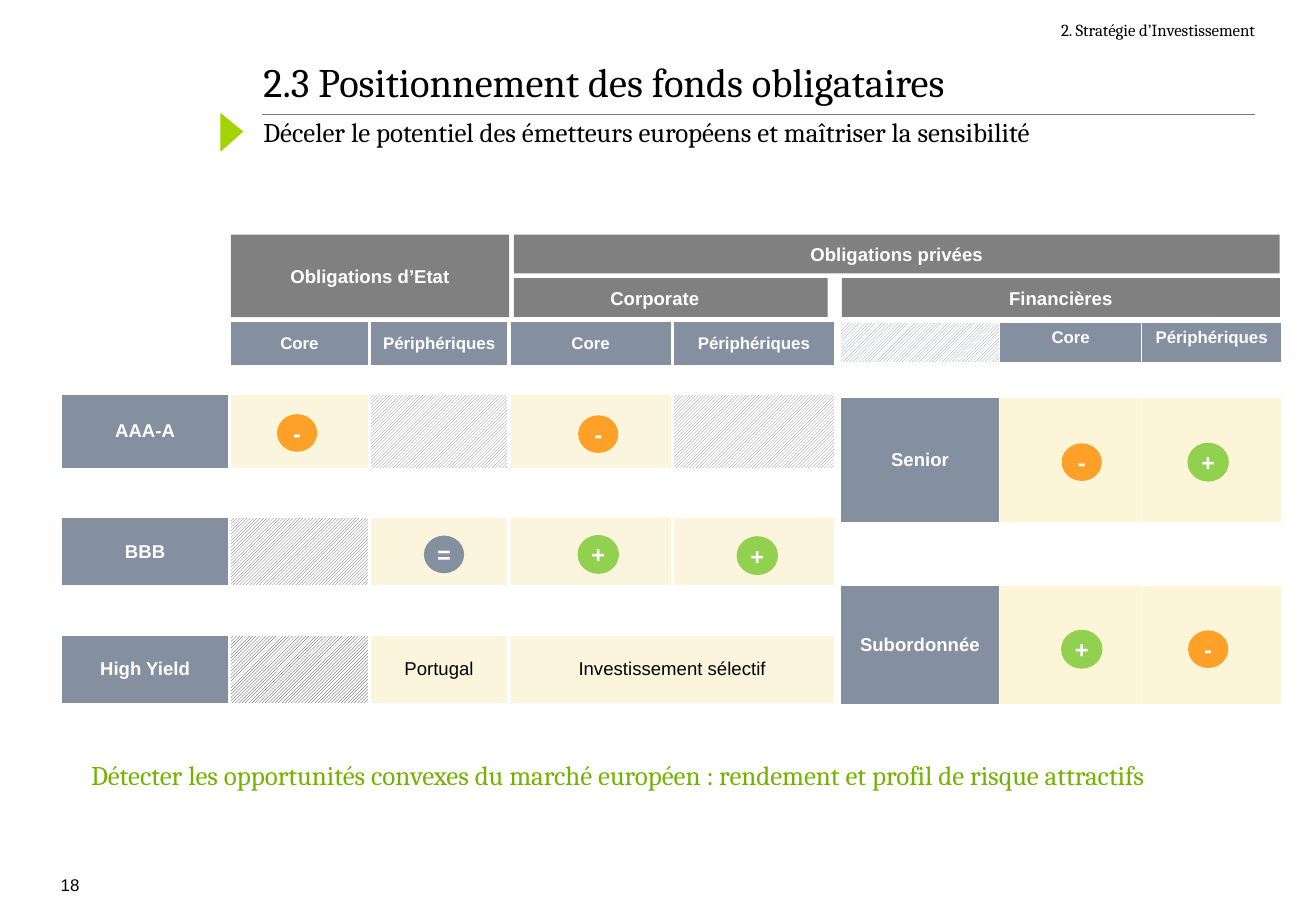
"""Build the slide on the positioning of bond funds."""
from dataclasses import dataclass
from typing import Any, NamedTuple

from lxml import etree
from pptx import Presentation
from pptx.dml.color import RGBColor
from pptx.enum.dml import MSO_PATTERN
from pptx.enum.shapes import MSO_CONNECTOR, MSO_SHAPE
from pptx.enum.text import MSO_ANCHOR, PP_ALIGN
from pptx.oxml.ns import qn
from pptx.util import Pt

LEFT, CENTER, RIGHT = PP_ALIGN.LEFT, PP_ALIGN.CENTER, PP_ALIGN.RIGHT
TOP, MIDDLE, BOTTOM = MSO_ANCHOR.TOP, MSO_ANCHOR.MIDDLE, MSO_ANCHOR.BOTTOM
OVAL, RECT, TRIANGLE = MSO_SHAPE.OVAL, MSO_SHAPE.RECTANGLE, MSO_SHAPE.ISOSCELES_TRIANGLE
HATCH = MSO_PATTERN.LIGHT_UPWARD_DIAGONAL
STRAIGHT = MSO_CONNECTOR.STRAIGHT

WHITE, BLACK, GREY, SLATE = "FFFFFF", "000000", "808080", "848FA0"
CREAM, SAND = "FCF5DD", "FCF5D7"
GREEN, ORANGE, LIME, LEAF = "92D050", "FFA028", "A3D400", "73B300"


class Style(NamedTuple):
    size: float
    color: str = WHITE
    bold: bool = True
    font: str = "Arial"
    align: Any = CENTER


class Cell(NamedTuple):
    text: str = ""
    fill: str = WHITE
    style: Style = Style(11)
    span: int = 1
    hatched: bool = False
    anchor: Any = MIDDLE


class Row(NamedTuple):
    height: float
    cells: list[Cell]


class Borders(NamedTuple):
    side: float
    top: float
    bottom: float


@dataclass
class Label:
    text: str
    box: tuple[float, float, float, float]
    style: Style
    anchor: Any = TOP
    insets: tuple[float, float, float, float] = (0, 0, 0, 0)


@dataclass
class Badge:
    sign: str
    left: float
    top: float


HEAD = Style(10)
PLAIN = Style(11, BLACK, False)
BADGE_SIZE = (23.8, 22.3)
BADGE_FILL = {"+": GREEN, "-": ORANGE, "=": SLATE}


def hatch(color: str) -> Cell:
    return Cell(fill=color, hatched=True)


GAP = Cell()
OPEN, FINANCIAL = Cell(fill=CREAM), Cell(fill=SAND)
CORE, PERIPHERY = Cell("Core", SLATE, HEAD), Cell("Périphériques", SLATE, HEAD)
SPACER = [Cell(span=2)] + [GAP] * 4

RATING_COLS = [22.3, 77.8, 82.8, 82.8, 96.8, 96.8]
RATING_ROWS = [
    Row(28.3, [GAP, GAP] + [CORE, PERIPHERY] * 2),
    Row(15.3, [GAP] * 6),
    Row(45.5, [Cell("AAA-A", SLATE, span=2), OPEN, hatch(GREY), OPEN, hatch(GREY)]),
    Row(27.5, SPACER),
    Row(42, [Cell("BBB", SLATE, span=2), hatch("595959"), OPEN, OPEN, OPEN]),
    Row(27.5, SPACER),
    Row(42.8, [Cell("High Yield", SLATE, span=2), hatch("262626"),
               Cell("Portugal", CREAM, PLAIN),
               Cell("Investissement sélectif", CREAM, PLAIN, span=2)]),
]
SENIORITY_COLS = [94.3, 84.3, 82.8]
SENIORITY_ROWS = [
    Row(25.2, [hatch(SLATE), CORE._replace(anchor=TOP), PERIPHERY._replace(anchor=TOP)]),
    Row(19.4, [GAP] * 3),
    Row(74.2, [Cell("Senior", SLATE), FINANCIAL, FINANCIAL]),
    Row(37.4, [GAP] * 3),
    Row(70.6, [Cell("Subordonnée", SLATE), FINANCIAL, FINANCIAL]),
]

HEADERS = [
    Label("Obligations d’Etat", (136.8, 139, 165, 49), Style(11), MIDDLE),
    Label("Obligations privées", (304.6, 139, 453.8, 23), Style(11), MIDDLE),
    Label("Corporate", (304.6, 164.9, 186, 23), Style(11), MIDDLE, (0, 0, 19, 0)),
    Label("Financières", (499, 164.9, 259.6, 23), Style(11), MIDDLE),
]
TEXTS = [
    Label("2. Stratégie d’Investissement", (491.8, 11.5, 252, 12.2),
          Style(10, BLACK, False, "Cambria", RIGHT), insets=(7.2, 0, 0, 0)),
    Label("2.3 Positionnement des fonds obligataires", (156.2, 38.2, 587.5, 28),
          Style(24, BLACK, False, "Cambria", LEFT), MIDDLE, (0, 0, 0, 8.6)),
    Label("Déceler le potentiel des émetteurs européens et maîtriser la sensibilité",
          (156.2, 68.4, 588.2, 25.2), Style(16, BLACK, False, "Cambria", LEFT),
          insets=(0, 0, 0, 8.6)),
    Label("Détecter les opportunités convexes du marché européen : "
          "rendement et profil de risque attractifs",
          (54, 449.3, 707.8, 19.4), Style(16, LEAF, False, "Cambria", LEFT), BOTTOM),
    Label("18", (36, 514, 23.8, 15.8), Style(10, BLACK, False, "Arial", LEFT),
          insets=(0, 4.3, 0, 0)),
]
BADGES = [
    Badge("-", 164.2, 245.5), Badge("-", 342.7, 246.2),
    Badge("=", 251.3, 317.5), Badge("+", 342.7, 317.5), Badge("+", 437, 318.2),
    Badge("-", 629.3, 262.8), Badge("+", 704.2, 262.8),
    Badge("+", 629.3, 373.7), Badge("-", 704.2, 373.7),
]


def rgb(color: str) -> RGBColor:
    return RGBColor.from_string(color)


def set_attrs(obj: Any, values: dict[str, Any]) -> None:
    for name, value in values.items():
        setattr(obj, name, value)


def write(tf: Any, text: str, style: Style) -> None:
    p = tf.paragraphs[0]
    p.alignment = style.align
    r = p.add_run()
    r.text = text
    set_attrs(r.font, {"name": style.font, "size": Pt(style.size), "bold": style.bold})
    r.font.color.rgb = rgb(style.color)


def fill_label(sp: Any, label: Label) -> None:
    left, top, right, bottom = map(Pt, label.insets)
    set_attrs(sp.text_frame, {
        "word_wrap": True, "vertical_anchor": label.anchor, "margin_left": left,
        "margin_top": top, "margin_right": right, "margin_bottom": bottom})
    write(sp.text_frame, label.text, label.style)


def add_shape(s: Any, kind: Any, box: tuple[float, ...], fill: str,
              line: str = "", width: float = 0.75) -> Any:
    sp = s.shapes.add_shape(kind, *map(Pt, box))
    sp.shadow.inherit = False
    sp.fill.solid()
    sp.fill.fore_color.rgb = rgb(fill)
    if line:
        sp.line.color.rgb = rgb(line)
        sp.line.width = Pt(width)
    else:
        sp.line.fill.background()
    return sp


def format_cell(tc: Any, cell: Cell, borders: Borders) -> None:
    tc.vertical_anchor = cell.anchor
    if cell.hatched:
        tc.fill.patterned()
        tc.fill.pattern = HATCH
        tc.fill.back_color.rgb = rgb(WHITE)
    else:
        tc.fill.solid()
    tc.fill.fore_color.rgb = rgb(cell.fill)
    widths = (borders.side, borders.side, borders.top, borders.bottom)
    for i, (side, width) in enumerate(zip("LRTB", widths)):
        ln = etree.Element(qn(f"a:ln{side}"), w=str(Pt(width)))
        etree.SubElement(etree.SubElement(ln, qn("a:solidFill")), qn("a:srgbClr"), val=WHITE)
        tc._tc.get_or_add_tcPr().insert(i, ln)


def add_table(s: Any, left: float, top: float, cols: list[float], rows: list[Row],
              borders: list[Borders]) -> None:
    size = (sum(cols), sum(row.height for row in rows))
    frame = s.shapes.add_table(len(rows), len(cols), *map(Pt, (left, top, *size)))
    table = frame.table
    set_attrs(table, {"first_row": False, "horz_banding": False})
    for col, width in zip(table.columns, cols):
        col.width = Pt(width)
    for i, row in enumerate(rows):
        table.rows[i].height = Pt(row.height)
        j = 0
        for cell in row.cells:
            first, last = table.cell(i, j), table.cell(i, j + cell.span - 1)
            if cell.span > 1:
                first.merge(last)
            for k in range(j, j + cell.span):
                tc = table.cell(i, k)
                format_cell(tc, cell, borders[i])
                if not cell.text or k > j:
                    p = tc.text_frame.paragraphs[0]
                    etree.SubElement(p._p, qn("a:endParaRPr"), sz="600")
            if cell.text:
                write(first.text_frame, cell.text, cell.style)
            j += cell.span


def main() -> None:
    prs = Presentation()
    set_attrs(prs, {"slide_width": Pt(780), "slide_height": Pt(540)})
    s = prs.slides.add_slide(prs.slide_layouts[6])

    rule = s.shapes.add_connector(STRAIGHT, *map(Pt, (155.5, 67.8, 743.8, 67.8)))
    rule.line.color.rgb = rgb("787878")
    rule.line.width = Pt(0.5)
    etree.SubElement(rule._element.spPr, qn("a:effectLst"))
    marker = add_shape(s, TRIANGLE, (125.3, 71.3, 24.5, 14.4), LIME, WHITE, 0.5)
    marker.rotation = 90
    marker.adjustments[0] = 0.48

    for label in TEXTS:
        fill_label(s.shapes.add_textbox(*map(Pt, label.box)), label)
    add_table(s, 36, 189.4, RATING_COLS, RATING_ROWS,
              [Borders(2.25, 3, 3)] * len(RATING_ROWS))
    add_table(s, 498.2, 190.8, SENIORITY_COLS, SENIORITY_ROWS,
              [Borders(1, 1, 3), Borders(1, 3, 1)] + [Borders(1, 1, 1)] * 3)
    for label in HEADERS:
        fill_label(add_shape(s, RECT, label.box, GREY), label)
    for badge in BADGES:
        box = (badge.left, badge.top, *BADGE_SIZE)
        line = GREEN if badge.sign == "+" else ""
        sp = add_shape(s, OVAL, box, BADGE_FILL[badge.sign], line)
        fill_label(sp, Label(badge.sign, box, Style(14), MIDDLE))
    prs.save("out.pptx")


if __name__ == "__main__":
    main()
